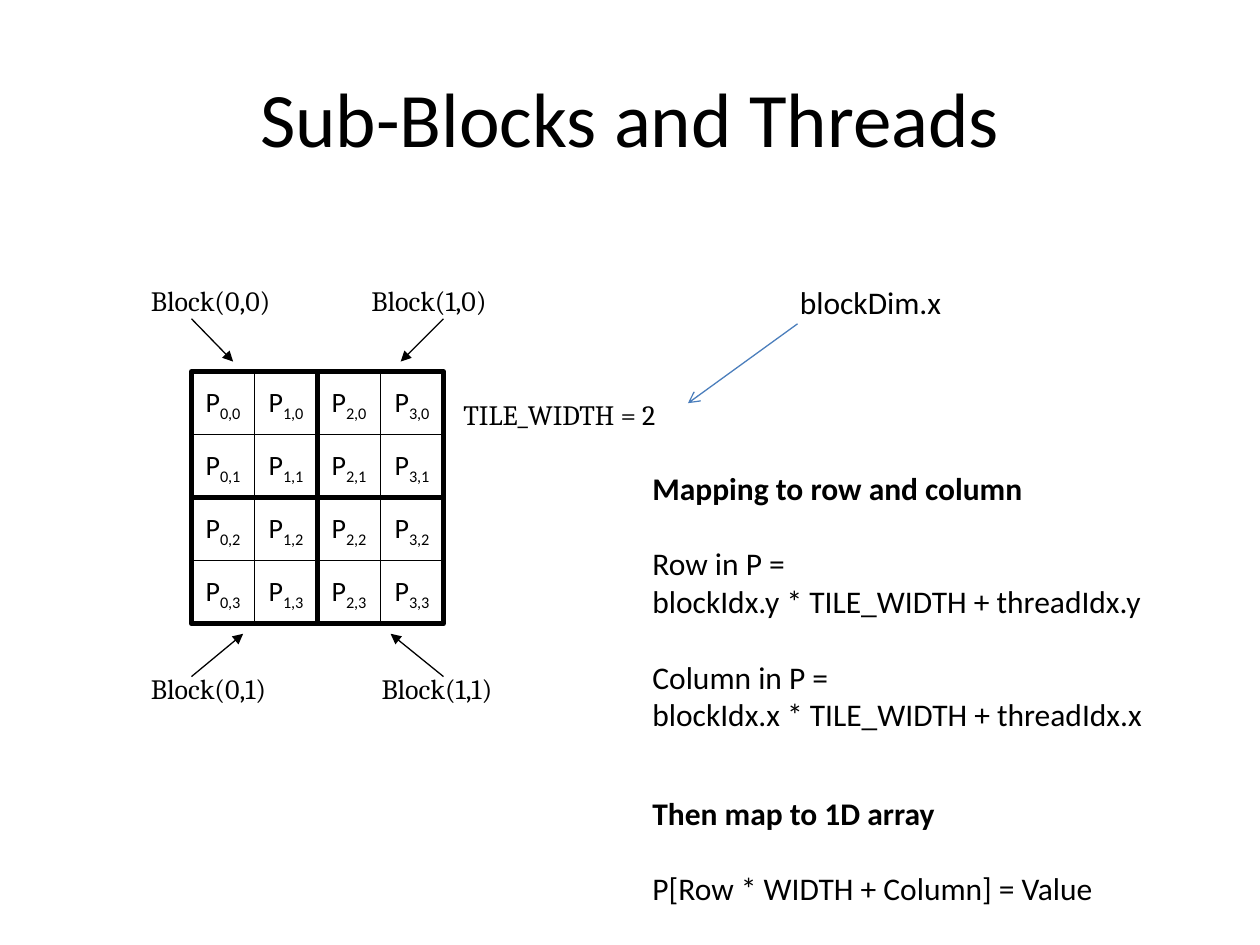
import itertools
from dataclasses import dataclass

import pptx
import pptx.dml.color
import pptx.enum.shapes
import pptx.enum.text
import pptx.oxml.ns
import pptx.util
from lxml import etree
from pptx.util import Inches

COLORS = {"ink": "000000", "blue": "4B7EBC"}
SANS, SERIF = "Calibri", "Cambria"
LEFT, TOP, CELL, COUNT = 1.52, 2.95, 0.5, 4
TILE = 2 * CELL
ALIGN = pptx.enum.text.PP_ALIGN
ANCHOR = pptx.enum.text.MSO_ANCHOR


@dataclass
class Line:
    text: str
    bold: bool = False
    gap: float = 0


@dataclass
class Label:
    left: float
    top: float
    width: float
    height: float
    lines: list[Line]
    font: str = SERIF
    size: float = 16


@dataclass
class Arrow:
    start: tuple[float, float]
    end: tuple[float, float]
    color: str = "ink"
    head: str = "triangle"


LABELS = [
    Label(1.1, 2.2, 1.16, 0.37, [Line("Block(0,0)")]),
    Label(2.85, 2.2, 1.16, 0.37, [Line("Block(1,0)")]),
    Label(1.1, 5.28, 1.16, 0.37, [Line("Block(0,1)")]),
    Label(2.93, 5.28, 1.16, 0.37, [Line("Block(1,1)")]),
    Label(3.58, 3.11, 1.88, 0.37, [Line("TILE_WIDTH = 2")]),
    Label(5.08, 3.67, 4.13, 2.22, [
        Line("Mapping to row and column", bold=True),
        Line("Row in P =", gap=21.6),
        Line("blockIdx.y * TILE_WIDTH + threadIdx.y"),
        Line("Column in P =", gap=21.6),
        Line("blockIdx.x * TILE_WIDTH + threadIdx.x"),
    ], SANS, 18),
    Label(5.08, 6.25, 3.74, 1.01, [
        Line("Then map to 1D array", bold=True),
        Line("P[Row * WIDTH + Column] = Value", gap=21.6),
    ], SANS, 18),
    Label(6.25, 2.2, 1.33, 0.4, [Line("blockDim.x")], SANS, 18),
]

ARROWS = [
    Arrow((1.52, 2.53), (1.85, 2.87)),
    Arrow((3.52, 2.53), (3.18, 2.87)),
    Arrow((1.52, 5.37), (1.93, 5.03)),
    Arrow((3.52, 5.37), (3.1, 5.03)),
    Arrow((6.33, 2.57), (5.46, 3.2), "blue", "arrow"),
]


def get_color(name: str) -> pptx.dml.color.RGBColor:
    return pptx.dml.color.RGBColor.from_string(COLORS[name])


def add_run(para, text: str, size: float, font: str = SANS, bold: bool = False):
    run = para.add_run()
    run.text = text
    run.font.name = font
    run.font.size = pptx.util.Pt(size)
    run.font.bold = bold
    run.font.color.rgb = get_color("ink")
    return run


def add_title(slide, text: str) -> None:
    box = slide.shapes.add_textbox(Inches(0.5), Inches(0.3), Inches(9), Inches(1.25))
    frame = box.text_frame
    frame.word_wrap = True
    frame.vertical_anchor = ANCHOR.MIDDLE
    para = frame.paragraphs[0]
    para.alignment = ALIGN.CENTER
    add_run(para, text, 44)


def add_square(slide, left: float, top: float, side: float, weight: float):
    """Add an unfilled square with a black outline."""
    square = slide.shapes.add_shape(
        pptx.enum.shapes.MSO_SHAPE.RECTANGLE,
        Inches(left), Inches(top), Inches(side), Inches(side))
    square.shadow.inherit = False
    square.fill.background()
    square.line.color.rgb = get_color("ink")
    square.line.width = pptx.util.Pt(weight)
    return square


def add_cell(slide, col: int, row: int) -> None:
    """Add one element of P with its subscript."""
    square = add_square(slide, LEFT + col * CELL, TOP + row * CELL, CELL, 0.75)
    frame = square.text_frame
    frame.word_wrap = False
    frame.vertical_anchor = ANCHOR.MIDDLE
    para = frame.paragraphs[0]
    para.alignment = ALIGN.CENTER
    add_run(para, "P", 16)
    index = add_run(para, f"{col},{row}", 16)
    index.font._element.set("baseline", "-25000")


def add_label(slide, label: Label) -> None:
    box = slide.shapes.add_textbox(
        Inches(label.left), Inches(label.top),
        Inches(label.width), Inches(label.height))
    frame = box.text_frame
    frame.word_wrap = False
    frame.auto_size = pptx.enum.text.MSO_AUTO_SIZE.SHAPE_TO_FIT_TEXT
    for place, line in enumerate(label.lines):
        para = frame.add_paragraph() if place else frame.paragraphs[0]
        para.space_before = pptx.util.Pt(line.gap)
        add_run(para, line.text, label.size, label.font, line.bold)


def add_arrow(slide, arrow: Arrow) -> None:
    link = slide.shapes.add_connector(
        pptx.enum.shapes.MSO_CONNECTOR.STRAIGHT,
        *map(Inches, arrow.start + arrow.end))
    link.line.color.rgb = get_color(arrow.color)
    link.line.width = pptx.util.Pt(0.75)
    qn = pptx.oxml.ns.qn
    tail = etree.SubElement(link.line._get_or_add_ln(), qn("a:tailEnd"))
    tail.set("type", arrow.head)
    etree.SubElement(link._element.spPr, qn("a:effectLst"))


def main() -> None:
    deck = pptx.Presentation()
    deck.slide_width, deck.slide_height = Inches(10), Inches(7.5)
    slide = deck.slides.add_slide(deck.slide_layouts[6])
    add_title(slide, "Sub-Blocks and Threads")
    for row, col in itertools.product(range(COUNT), repeat=2):
        add_cell(slide, col, row)
    for row, col in itertools.product(range(COUNT // 2), repeat=2):
        add_square(slide, LEFT + col * TILE, TOP + row * TILE, TILE, 3)
    for label in LABELS:
        add_label(slide, label)
    for arrow in ARROWS:
        add_arrow(slide, arrow)
    deck.save("out.pptx")


if __name__ == "__main__":
    main()
